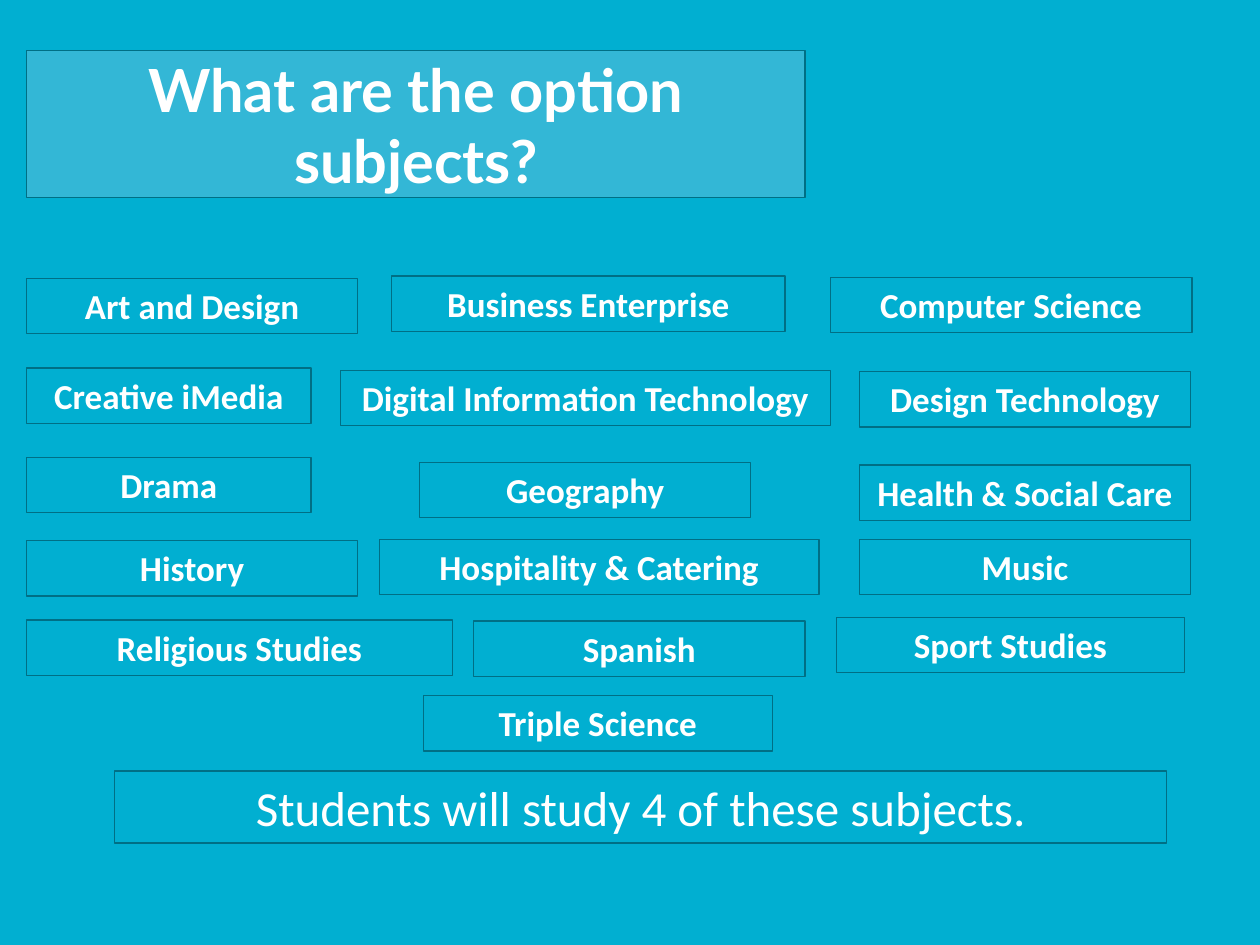
"""Build a slide listing the option subjects students can choose from."""
from lxml.etree import SubElement
from pptx import Presentation
from pptx.dml.color import RGBColor
from pptx.enum.shapes import MSO_SHAPE
from pptx.enum.text import MSO_ANCHOR, MSO_AUTO_SIZE, PP_ALIGN
from pptx.oxml.ns import qn
from pptx.util import Inches, Pt

TITLE = "What are the option subjects?"
SUBJECTS = [
    ("Art and Design", 0.21, 2.21, 2.63),
    ("Business Enterprise", 3.11, 2.19, 3.12),
    ("Computer Science", 6.59, 2.2, 2.87),
    ("Creative iMedia", 0.21, 2.92, 2.26),
    ("Digital Information Technology", 2.7, 2.94, 3.89),
    ("Design Technology", 6.82, 2.95, 2.63),
    ("Drama", 0.21, 3.63, 2.26),
    ("Geography", 3.33, 3.67, 2.63),
    ("Health & Social Care", 6.82, 3.69, 2.63),
    ("History", 0.21, 4.29, 2.63),
    ("Hospitality & Catering", 3.01, 4.28, 3.49),
    ("Music", 6.82, 4.28, 2.63),
    ("Religious Studies", 0.21, 4.92, 3.38),
    ("Spanish", 3.76, 4.93, 2.63),
    ("Sport Studies", 6.64, 4.9, 2.76),
    ("Triple Science", 3.36, 5.52, 2.77),
]
SUBJECT_HEIGHT = 0.44
SUMMARY = "Students will study 4 of these subjects."

TURQUOISE = RGBColor(0x01, 0xAF, 0xD1)
TEAL = RGBColor(0x00, 0x6F, 0x85)
PALE_BLUE = RGBColor(0xB7, 0xCC, 0xE4)
WHITE = RGBColor(0xFF, 0xFF, 0xFF)


def write(shape, text, font_name, size, bold, anchor):
    shape.line.color.rgb = TEAL
    shape.line.width = Pt(0.75)
    frame = shape.text_frame
    frame.text = text
    frame.word_wrap = True
    frame.vertical_anchor = anchor
    frame.margin_left = frame.margin_right = Inches(0.1)
    frame.margin_top = frame.margin_bottom = Inches(0.05)
    paragraph = frame.paragraphs[0]
    paragraph.alignment = PP_ALIGN.CENTER
    font = paragraph.runs[0].font
    font.name, font.size, font.bold = font_name, Pt(size), bold
    font.color.rgb = WHITE


def add_box(slide, text, left, top, width, height, size, bold):
    box = slide.shapes.add_shape(
        MSO_SHAPE.RECTANGLE, Inches(left), Inches(top), Inches(width), Inches(height)
    )
    box.shadow.inherit = False
    box.fill.background()
    write(box, text, "Calibri", size, bold, MSO_ANCHOR.TOP)
    box.text_frame.auto_size = MSO_AUTO_SIZE.SHAPE_TO_FIT_TEXT


def format_title(title):
    title.left, title.top = Inches(0.21), Inches(0.4)
    title.width, title.height = Inches(6.18), Inches(1.17)
    title.fill.solid()
    title.fill.fore_color.rgb = PALE_BLUE
    color = title.fill._xPr.find(qn("a:solidFill")).find(qn("a:srgbClr"))
    SubElement(color, qn("a:alpha")).set("val", "28000")
    write(title, TITLE, "Lato", 34, True, MSO_ANCHOR.MIDDLE)
    title.text_frame.auto_size = MSO_AUTO_SIZE.NONE


def main():
    presentation = Presentation()
    presentation.slide_width, presentation.slide_height = Inches(10), Inches(7.5)
    slide = presentation.slides.add_slide(presentation.slide_layouts[5])
    slide.background.fill.solid()
    slide.background.fill.fore_color.rgb = TURQUOISE
    format_title(slide.shapes.title)
    for subject, left, top, width in SUBJECTS:
        add_box(slide, subject, left, top, width, SUBJECT_HEIGHT, 20, True)
    add_box(slide, SUMMARY, 0.91, 6.12, 8.35, 0.57, 28, False)
    presentation.save("out.pptx")


if __name__ == "__main__":
    main()
